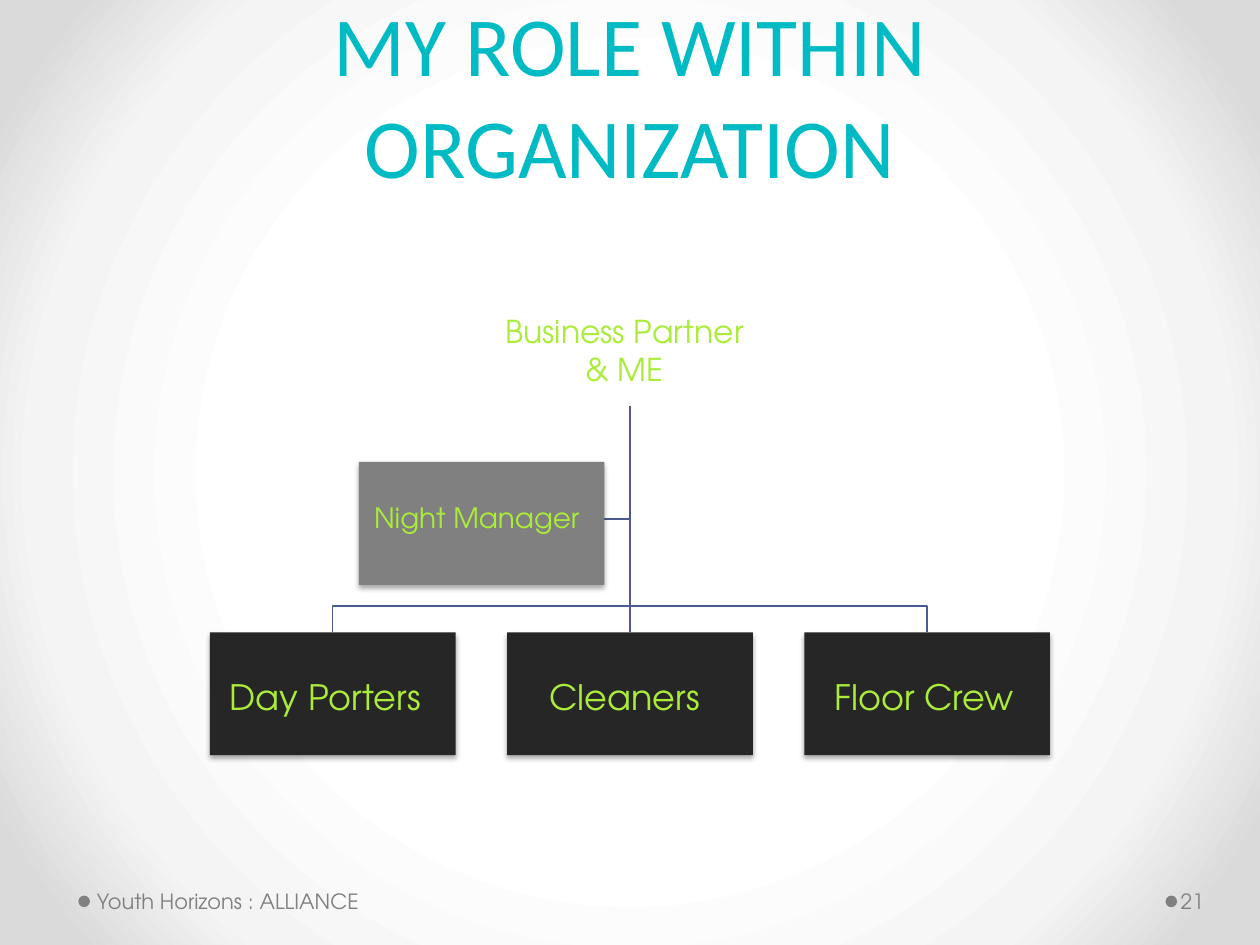
from pptx import Presentation
from pptx.dml.color import RGBColor
from pptx.enum.shapes import MSO_CONNECTOR, MSO_SHAPE
from pptx.enum.text import MSO_ANCHOR, MSO_AUTO_SIZE, PP_ALIGN
from pptx.oxml import parse_xml
from pptx.oxml.ns import nsdecls
from pptx.util import Pt

COLORS = {"title": "00BAC4", "label": "AAEC39", "gray": "808080",
          "dark": "262626", "line": "4A5B8E"}
BACKGROUND = [(50, "FFFFFF"), (76, "F4F4F4"), (92, "DADADA")]


def rgb(name):
    return RGBColor.from_string(COLORS[name])


class Deck:
    font = "TeX Gyre Adventor"
    title_font = "Calibri"

    def __init__(self, prs):
        self.s = prs.slides.add_slide(prs.slide_layouts[5])

    def background(self, stops):
        """Fill the slide with a gradient spreading from its centre."""
        self.s.background.fill.solid()
        bg = self.s.background._cSld.bg.bgPr
        gs = "".join(f'<a:gs pos="{pos * 1000}"><a:srgbClr val="{c}"/></a:gs>'
                     for pos, c in stops)
        bg.replace(bg[0], parse_xml(
            f'<a:gradFill {nsdecls("a")} rotWithShape="1"><a:gsLst>{gs}</a:gsLst>'
            '<a:path path="circle"><a:fillToRect l="50000" t="50000" '
            'r="50000" b="50000"/></a:path></a:gradFill>'))

    def run(self, p, text, size, color, font=None):
        r = p.add_run()
        r.text = text
        r.font.size = Pt(size)
        r.font.name = font or self.font
        r.font.color.rgb = rgb(color)

    def title(self, text, x, y, w, h):
        sp = self.s.shapes.title
        sp.left, sp.top, sp.width, sp.height = Pt(x), Pt(y), Pt(w), Pt(h)
        tf = sp.text_frame
        tf.auto_size = MSO_AUTO_SIZE.NONE
        tf.word_wrap = True
        tf.vertical_anchor = MSO_ANCHOR.BOTTOM
        p = tf.paragraphs[0]
        p.alignment = PP_ALIGN.CENTER
        p.line_spacing = Pt(58)
        self.run(p, text, 48, "title", self.title_font)

    def text(self, text, x, y, w, h, size, color="label",
             align=PP_ALIGN.CENTER, left=3.6, right=7.2):
        tf = self.s.shapes.add_textbox(Pt(x), Pt(y), Pt(w), Pt(h)).text_frame
        tf.word_wrap = True
        tf.vertical_anchor = MSO_ANCHOR.MIDDLE
        tf.margin_left, tf.margin_right = Pt(left), Pt(right)
        tf.margin_top = tf.margin_bottom = Pt(3.6)
        p = tf.paragraphs[0]
        p.alignment = align
        self.run(p, text, size, color)

    def shape(self, kind, x, y, w, h, color):
        sp = self.s.shapes.add_shape(kind, Pt(x), Pt(y), Pt(w), Pt(h))
        sp.shadow.inherit = False
        sp.fill.solid()
        sp.fill.fore_color.rgb = rgb(color)
        sp.line.fill.background()
        return sp

    def box(self, x, y, w, h, color):
        sp = self.shape(MSO_SHAPE.RECTANGLE, x, y, w, h, color)
        sp._element.spPr.find("{*}effectLst").append(parse_xml(
            f'<a:outerShdw {nsdecls("a")} blurRad="{Pt(3.1)}" dist="{Pt(1.8)}" '
            'dir="5400000" rotWithShape="0"><a:srgbClr val="000000">'
            '<a:alpha val="35000"/></a:srgbClr></a:outerShdw>'))

    def line(self, x1, y1, x2, y2):
        c = self.s.shapes.add_connector(
            MSO_CONNECTOR.STRAIGHT, Pt(x1), Pt(y1), Pt(x2), Pt(y2))
        c._element.spPr.append(parse_xml(f'<a:effectLst {nsdecls("a")}/>'))
        self.stroke(c)

    def polyline(self, *points):
        start, *rest = [(Pt(x), Pt(y)) for x, y in points]
        fb = self.s.shapes.build_freeform(*start)
        fb.add_line_segments(rest, close=False)
        sp = fb.convert_to_shape()
        sp.shadow.inherit = False
        sp.fill.background()
        self.stroke(sp)

    def stroke(self, sp):
        sp.line.color.rgb = rgb("line")
        sp.line.width = Pt(0.75)


def main():
    prs = Presentation()
    prs.slide_width, prs.slide_height = Pt(720), Pt(540)
    d = Deck(prs)
    d.background(BACKGROUND)
    d.title("MY ROLE WITHIN ORGANIZATION", 36, 10.8, 648, 104.4)

    # Tree geometry
    center, trunk_top, bus, team_top = 360, 232, 346.4, 361.3
    box_w, box_h, step = 140.4, 70.2, 169.8
    night_x, night_y, night_mid = 205, 264, 296.6
    teams = ["Day Porters", "Cleaners", "Floor Crew"]

    d.polyline((center, trunk_top), (center, night_mid),
               (night_x + box_w, night_mid))
    d.line(center, trunk_top, center, team_top)
    for x in (center - step, center + step):
        d.polyline((center, trunk_top), (center, bus), (x, bus), (x, team_top))

    d.text("Business Partner & ME", 282, 166.3, 153.4, 67.7, 18)
    d.box(night_x, night_y, box_w, box_h, "gray")
    d.text("Night Manager", 190, 262, 168.5, 67.7, 16)
    for i, team in enumerate(teams):
        d.box(center + (i - 1) * step - box_w / 2, team_top, box_w, box_h, "dark")
        d.text(team, 111 + 171 * i, 364.3, 153.4, 67.7, 20)

    # Footer
    for x in (44.8, 666):
        d.shape(MSO_SHAPE.OVAL, x, 511.8, 6.6, 6.6, "gray")
    d.text("Youth Horizons : ALLIANCE", 51.8, 500.4, 224, 28.8, 12, "gray",
           PP_ALIGN.LEFT)
    d.text("21", 672.5, 500.4, 44, 28.8, 12, "gray", PP_ALIGN.LEFT, 2.2, 3.6)

    prs.save("out.pptx")


if __name__ == "__main__":
    main()
